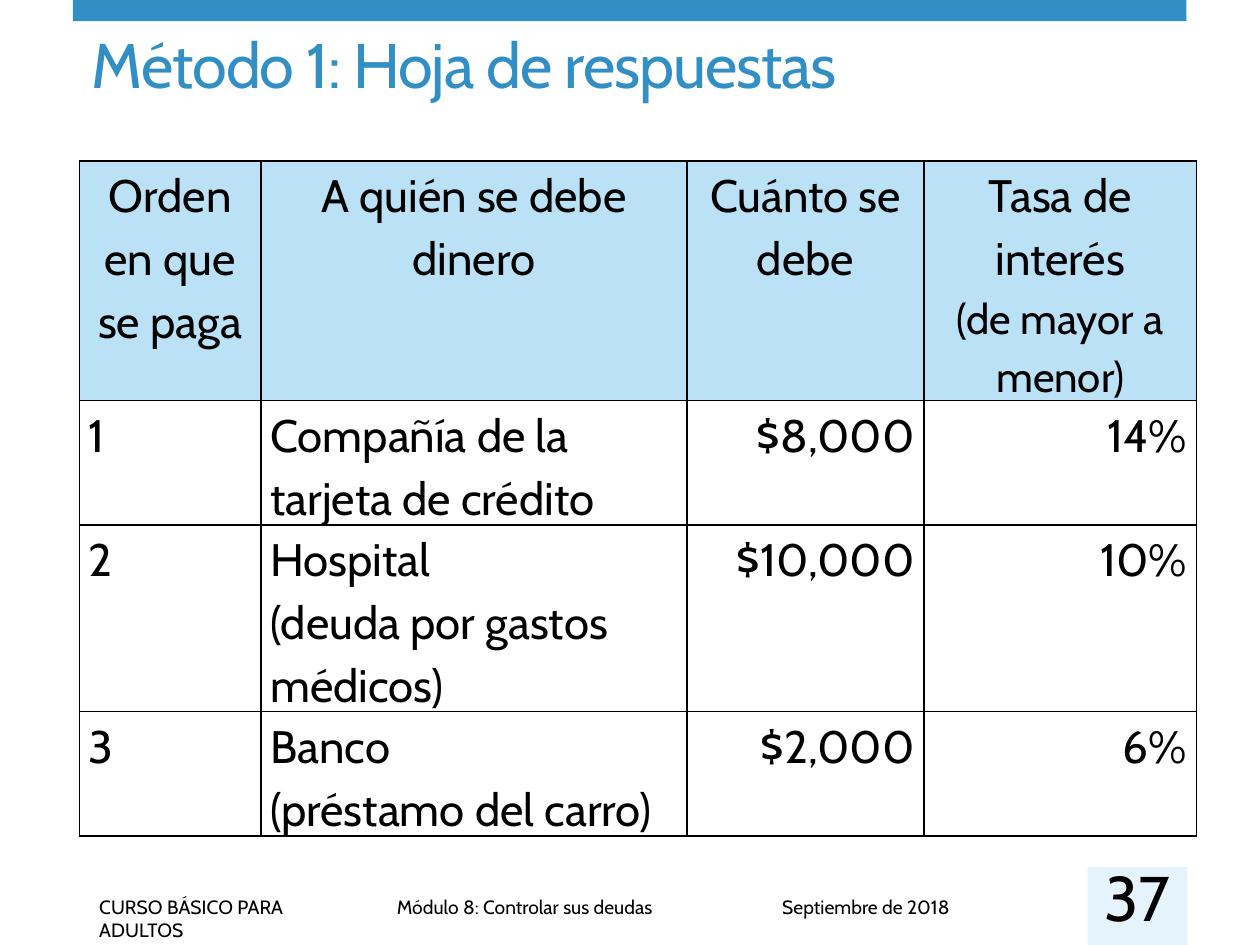
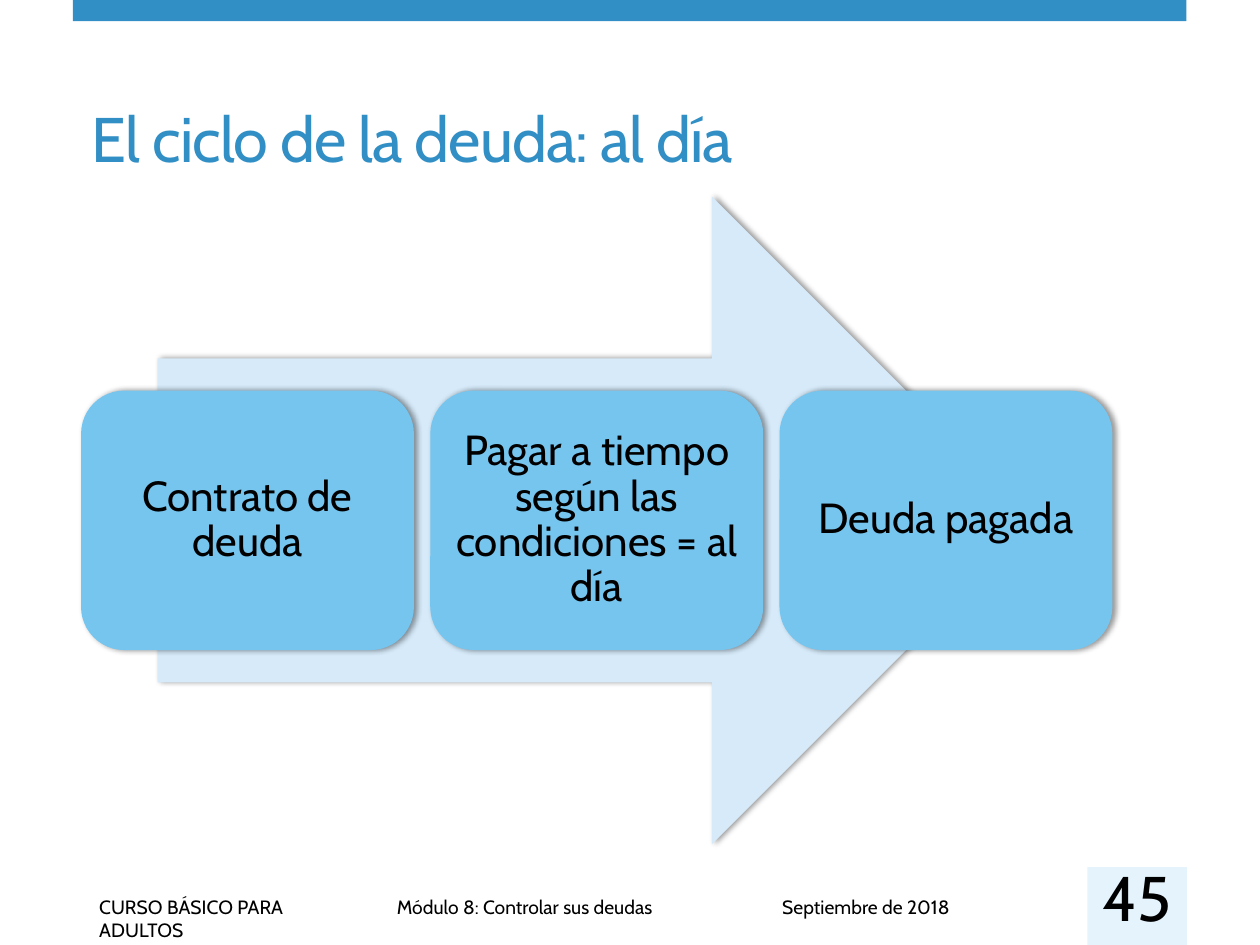
"""Build two slides on debt: an answer table and the cycle of an up-to-date debt."""
from lxml import etree
from pptx import Presentation
from pptx import util as u
from pptx.dml.color import RGBColor
from pptx.enum import shapes, text
from pptx.oxml import parse_xml
from pptx.oxml.ns import qn

FONT = "Cabin"
BLUE, SKY, PALE, ARROW, BLACK = "318FC5", "76C5EF", "E4F3FC", "D6EAF9", "000000"
LEFT, CENTER, RIGHT = text.PP_ALIGN.LEFT, text.PP_ALIGN.CENTER, text.PP_ALIGN.RIGHT
NS = 'xmlns:a="http://schemas.openxmlformats.org/drawingml/2006/main"'

BAND = (1.47, 0, 22.45, 0.43)
NUMBER_TILE = (21.92, 17.48, 2.01, 1.57)
NUMBER_BOX = (21.92, 17.68, 2.01, 0.79)
FOOTER_TOP, FOOTER_HEIGHT = 17.93, 0.74
FOOTERS = [
    ("CURSO BÁSICO PARA ADULTOS", 1.75, 5.66),
    ("Módulo 8: Controlar sus deudas", 7.75, 14.38),
    ("Septiembre de 2018", 15.52, 6.4),
]

ANSWERS = {
    "title": "Método 1: Hoja de respuestas",
    "title_box": (1.6, 0.46, 22.53, 1.7),
    "number": "37",
    "header": [
        [("Orden en que se paga", 26)],
        [("A quién se debe dinero", 26)],
        [("Cuánto se debe", 26)],
        [("Tasa de interés", 26), ("(de mayor a menor)", 24)],
    ],
    "debts": [
        ("1", "Compañía de la tarjeta de crédito", "$8,000", "14%"),
        ("2", "Hospital\n(deuda por gastos médicos)", "$10,000", "10%"),
        ("3", "Banco\n(préstamo del carro)", "$2,000", "6%"),
    ],
    "aligns": (LEFT, LEFT, RIGHT, RIGHT),
    "corner": (1.6, 3.25),
    "cols": (3.66, 8.59, 4.78, 5.49),
    "rows": (3.15, 1.52, 1.52, 1.52),
}
CYCLE = {
    "title": "El ciclo de la deuda: al día",
    "title_box": (1.6, 1.22, 20.83, 2.44),
    "number": "45",
    "arrow": (3.18, 3.96, 17.7, 13.06),
    "steps": [
        "Contrato de deuda",
        "Pagar a tiempo según las condiciones = al día",
        "Deuda pagada",
    ],
    "step_size": (6.71, 5.23),
    "gap": 0.33,
}


def rgb(color):
    return RGBColor.from_string(color)


def cm(*lengths):
    return [u.Cm(n) for n in lengths]


def write(p, words, size, color=BLACK, align=LEFT, spacing=None):
    p.alignment = align
    if spacing:
        p.line_spacing = spacing
    for i, line in enumerate(words.split("\n")):
        if i:
            p.add_line_break()
        r = p.add_run()
        r.text = line
        r.font.name, r.font.size = FONT, u.Pt(size)
        r.font.color.rgb = rgb(color)


def add_text(s, box, words, size, align=LEFT):
    tf = s.shapes.add_textbox(*cm(*box)).text_frame
    tf.word_wrap = True
    write(tf.paragraphs[0], words, size, align=align)
    return tf


def set_insets(tf, inset):
    tf.margin_left = tf.margin_right = tf.margin_top = tf.margin_bottom = u.Cm(inset)


def add_block(s, kind, box, color):
    sp = s.shapes.add_shape(kind, *cm(*box))
    sp.shadow.inherit = False
    sp.fill.solid()
    sp.fill.fore_color.rgb = rgb(color)
    sp.line.fill.background()
    return sp


def cast_shadow(sp):
    effects = sp._element.spPr.find(qn("a:effectLst"))
    effects.append(parse_xml(
        f'<a:outerShdw {NS} blurRad="40000" dist="23000" dir="0" rotWithShape="0">'
        f'<a:srgbClr val="{BLACK}"><a:alpha val="40000"/></a:srgbClr></a:outerShdw>'))


def add_slide(prs, content):
    s = prs.slides.add_slide(prs.slide_layouts[5])
    title = s.shapes.title
    title.left, title.top, title.width, title.height = cm(*content["title_box"])
    tf = title.text_frame
    tf.auto_size, tf.word_wrap = text.MSO_AUTO_SIZE.NONE, True
    tf.vertical_anchor = text.MSO_ANCHOR.BOTTOM
    p = tf.paragraphs[0]
    write(p, content["title"], 36, BLUE)
    p.runs[0].font._element.set("spc", "-60")

    add_block(s, shapes.MSO_SHAPE.RECTANGLE, BAND, BLUE)
    add_block(s, shapes.MSO_SHAPE.RECTANGLE, NUMBER_TILE, PALE)
    for words, left, width in FOOTERS:
        add_text(s, (left, FOOTER_TOP, width, FOOTER_HEIGHT), words, 11)
    tf = add_text(s, NUMBER_BOX, content["number"], 36, CENTER)
    tf.vertical_anchor = text.MSO_ANCHOR.MIDDLE
    set_insets(tf, 0)
    return s


def fill_cell(cell, lines, align, shaded):
    cell.margin_left = cell.margin_right = u.Cm(0.19)
    cell.margin_top = cell.margin_bottom = 0
    tf = cell.text_frame
    for i, (words, size) in enumerate(lines):
        p = tf.add_paragraph() if i else tf.paragraphs[0]
        write(p, words, size, align=align, spacing=1.14)
    tc_pr = cell._tc.get_or_add_tcPr()
    if shaded:
        cell.fill.solid()
        cell.fill.fore_color.rgb = rgb(SKY)
        color = tc_pr.find(".//" + qn("a:srgbClr"))
        etree.SubElement(color, qn("a:alpha")).set("val", "50000")
    else:
        cell.fill.background()
    for i, side in enumerate("LRTB"):
        tc_pr.insert(i, parse_xml(
            f'<a:ln{side} {NS} w="12700"><a:solidFill><a:srgbClr val="{BLACK}"/>'
            f'</a:solidFill></a:ln{side}>'))


def add_answers(prs):
    s = add_slide(prs, ANSWERS)
    cols, rows = ANSWERS["cols"], ANSWERS["rows"]
    box = (*ANSWERS["corner"], sum(cols), sum(rows))
    table = s.shapes.add_table(len(rows), len(cols), *cm(*box)).table
    table.first_row = table.horz_banding = False
    for col, width in zip(table.columns, cols):
        col.width = u.Cm(width)
    for row, height in zip(table.rows, rows):
        row.height = u.Cm(height)
    for c, lines in enumerate(ANSWERS["header"]):
        fill_cell(table.cell(0, c), lines, CENTER, True)
    for r, debt in enumerate(ANSWERS["debts"], 1):
        for c, (words, align) in enumerate(zip(debt, ANSWERS["aligns"])):
            fill_cell(table.cell(r, c), [(words, 26)], align, False)


def add_cycle(prs):
    s = add_slide(prs, CYCLE)
    left, top, width, height = CYCLE["arrow"]
    cast_shadow(add_block(s, shapes.MSO_SHAPE.RIGHT_ARROW, CYCLE["arrow"], ARROW))
    steps, gap = CYCLE["steps"], CYCLE["gap"]
    w, h = CYCLE["step_size"]
    start = left + (width - len(steps) * (w + gap) + gap) / 2
    for i, words in enumerate(steps):
        box = (start + i * (w + gap), top + (height - h) / 2, w, h)
        sp = add_block(s, shapes.MSO_SHAPE.ROUNDED_RECTANGLE, box, SKY)
        cast_shadow(sp)
        tf = sp.text_frame
        tf.word_wrap = True
        tf.vertical_anchor = text.MSO_ANCHOR.MIDDLE
        set_insets(tf, 0.25)
        write(tf.paragraphs[0], words, 24, align=CENTER, spacing=0.9)


def main():
    prs = Presentation()
    prs.slide_width, prs.slide_height = cm(25.4, 19.05)
    add_answers(prs)
    add_cycle(prs)
    prs.save("out.pptx")


if __name__ == "__main__":
    main()
